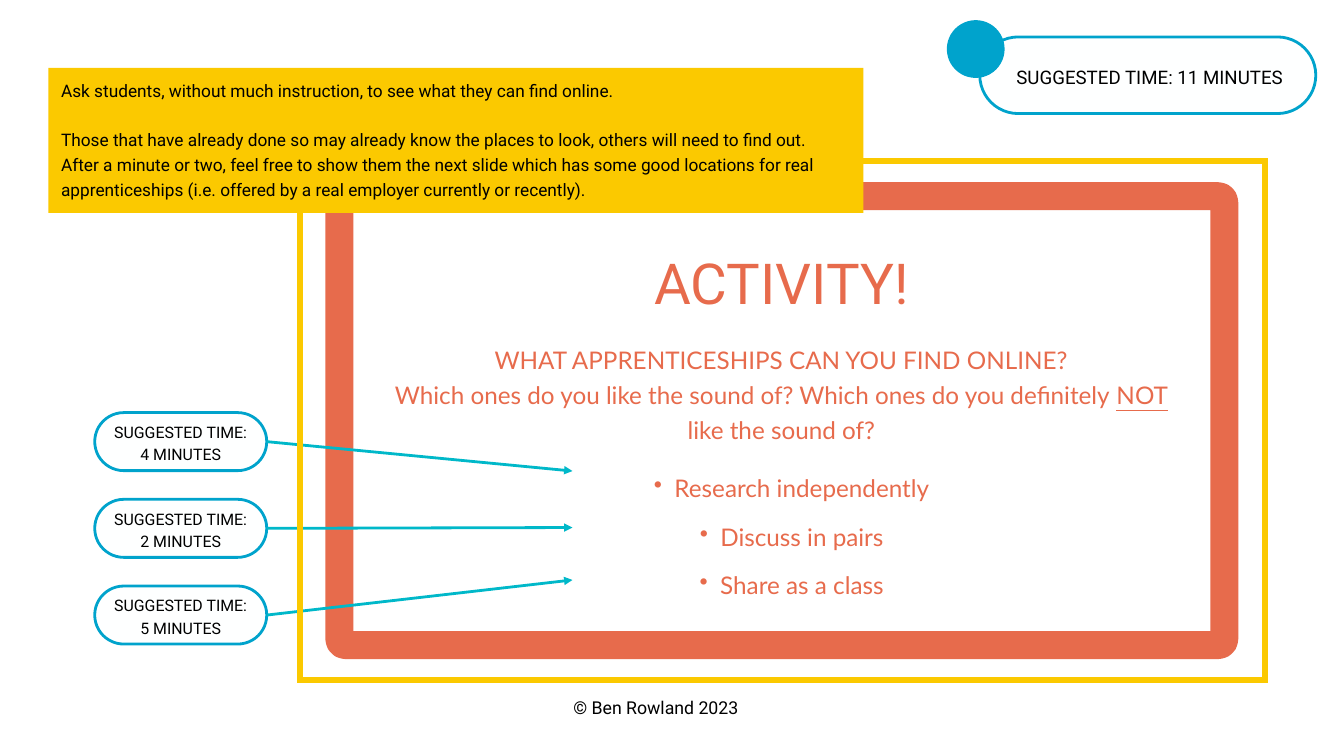
"""Build a classroom activity slide with timed steps and teacher notes."""
from lxml.etree import SubElement
from pptx import Presentation
from pptx.dml.color import RGBColor
from pptx.enum.shapes import MSO_CONNECTOR, MSO_SHAPE
from pptx.enum.text import MSO_ANCHOR, PP_ALIGN
from pptx.oxml.ns import qn
from pptx.util import Pt


class Theme:
    coral = RGBColor.from_string("E76B4C")
    gold = RGBColor.from_string("FBC900")
    blue = RGBColor.from_string("00A3CC")
    teal = RGBColor.from_string("00B8C9")
    white = RGBColor.from_string("FEFFFF")
    black = RGBColor.from_string("000000")
    head, body = "Roboto", "Lato"
    title, main, time, foot, note, step = 60.5, 26, 20, 19, 18.5, 17


def draw(kind, box, fill=None, line=None, width=3, round=None):
    shape = slide.shapes.add_shape(kind, *map(Pt, box))
    shape.shadow.inherit = False
    if round is not None:
        shape.adjustments[0] = round
    if fill is None:
        shape.fill.background()
    else:
        shape.fill.solid()
        shape.fill.fore_color.rgb = fill
    if line is None:
        shape.line.fill.background()
    else:
        shape.line.color.rgb = line
        shape.line.width = Pt(width)
    return shape


def write(shape, text, size, lead, font=Theme.head, color=Theme.black,
          align=PP_ALIGN.CENTER, anchor=MSO_ANCHOR.TOP, inset=(0, 0, 0, 0),
          gaps=(), bullet=False):
    frame = shape.text_frame
    frame.word_wrap = True
    frame.vertical_anchor = anchor
    (frame.margin_left, frame.margin_top,
     frame.margin_right, frame.margin_bottom) = map(Pt, inset)
    for i, line in enumerate(text.split("\n")):
        para = frame.add_paragraph() if i else frame.paragraphs[0]
        para.alignment = align
        para.line_spacing = Pt(lead)
        if i in gaps:
            para.space_before = Pt(lead)
        if bullet:
            para.level = 1
            props = para._p.get_or_add_pPr()
            props.set("marL", str(Pt(44)))
            props.set("indent", str(Pt(-22)))
            SubElement(props, qn("a:buChar"), char="•")
        for j, part in enumerate(line.split("_")):
            run = para.add_run()
            run.text = part
            run.font.name = font
            run.font.size = Pt(size)
            run.font.color.rgb = color
            if j % 2:
                run.font.underline = True


deck = Presentation()
deck.slide_width, deck.slide_height = Pt(1440), Pt(810)
slide = deck.slides.add_slide(deck.slide_layouts[6])

draw(MSO_SHAPE.ROUNDED_RECTANGLE, (363.6, 210.2, 948.2, 481),
     line=Theme.coral, width=30, round=0.0135)

lines = [
    ((612.7, 743, 180, 25.2), "© Ben Rowland 2023",
     dict(size=Theme.foot, lead=26.6)),
    ((574.6, 271.4, 525.6, 69.8), "ACTIVITY!",
     dict(size=Theme.title, lead=66.6, color=Theme.coral)),
    ((415.4, 363.6, 843.8, 108.7),
     "WHAT APPRENTICESHIPS CAN YOU FIND ONLINE?\n"
     "Which ones do you like the sound of? Which ones do you definitely "
     "_NOT_ like the sound of?",
     dict(size=Theme.main, lead=37.6, font=Theme.body, color=Theme.coral)),
    ((619.2, 486.7, 436.3, 145.4),
     "Research independently\nDiscuss in pairs\nShare as a class",
     dict(size=Theme.main, lead=51.9, font=Theme.body, color=Theme.coral,
          bullet=True)),
]
for box, text, style in lines:
    write(slide.shapes.add_textbox(*map(Pt, box)), text, **style)

for i, (mins, end) in enumerate([(4, 504.7), (2, 565.2), (5, 621.4)]):
    top = 442.1 + 92.9 * i
    pill = draw(MSO_SHAPE.ROUNDED_RECTANGLE, (101.5, top, 184.3, 62.2),
                fill=Theme.white, line=Theme.blue, round=0.5)
    write(pill, f"SUGGESTED TIME:\n{mins} MINUTES", Theme.step, 23.8,
          anchor=MSO_ANCHOR.MIDDLE)
    arrow = slide.shapes.add_connector(
        MSO_CONNECTOR.STRAIGHT, Pt(285.8), Pt(top + 31.1), Pt(613.4), Pt(end))
    arrow.begin_connect(pill, 3)
    arrow.line.color.rgb = Theme.teal
    arrow.line.width = Pt(3)
    props = arrow._element.spPr
    SubElement(props.find(qn("a:ln")), qn("a:tailEnd"), type="triangle")
    SubElement(props, qn("a:effectLst"))

border = draw(MSO_SHAPE.RECTANGLE, (321.1, 172.8, 1034.6, 555.8),
              line=Theme.gold, width=6.75)
SubElement(border._element.spPr.find(qn("a:ln")), qn("a:miter"), lim="800000")

total = draw(MSO_SHAPE.ROUNDED_RECTANGLE, (1049.8, 39.6, 360, 82.1),
             fill=Theme.white, line=Theme.blue, round=0.5)
write(total, "SUGGESTED TIME: 11 MINUTES", Theme.time, 28,
      anchor=MSO_ANCHOR.MIDDLE, inset=(4, 0, 0, 0))
draw(MSO_SHAPE.OVAL, (1014.5, 21.6, 61.9, 61.9), fill=Theme.blue)

note = draw(MSO_SHAPE.RECTANGLE, (51.8, 72.7, 873.4, 155.5), fill=Theme.gold)
write(note,
      "Ask students, without much instruction, to see what they can find "
      "online.\n"
      "Those that have already done so may already know the places to look, "
      "others will need to find out.\n"
      "After a minute or two, feel free to show them the next slide which has "
      "some good locations for real apprenticeships (i.e. offered by a real "
      "employer currently or recently).",
      Theme.note, 26.6, align=PP_ALIGN.LEFT, inset=(13.7, 8.6, 10.8, 0),
      gaps=(1,))

deck.save("out.pptx")
